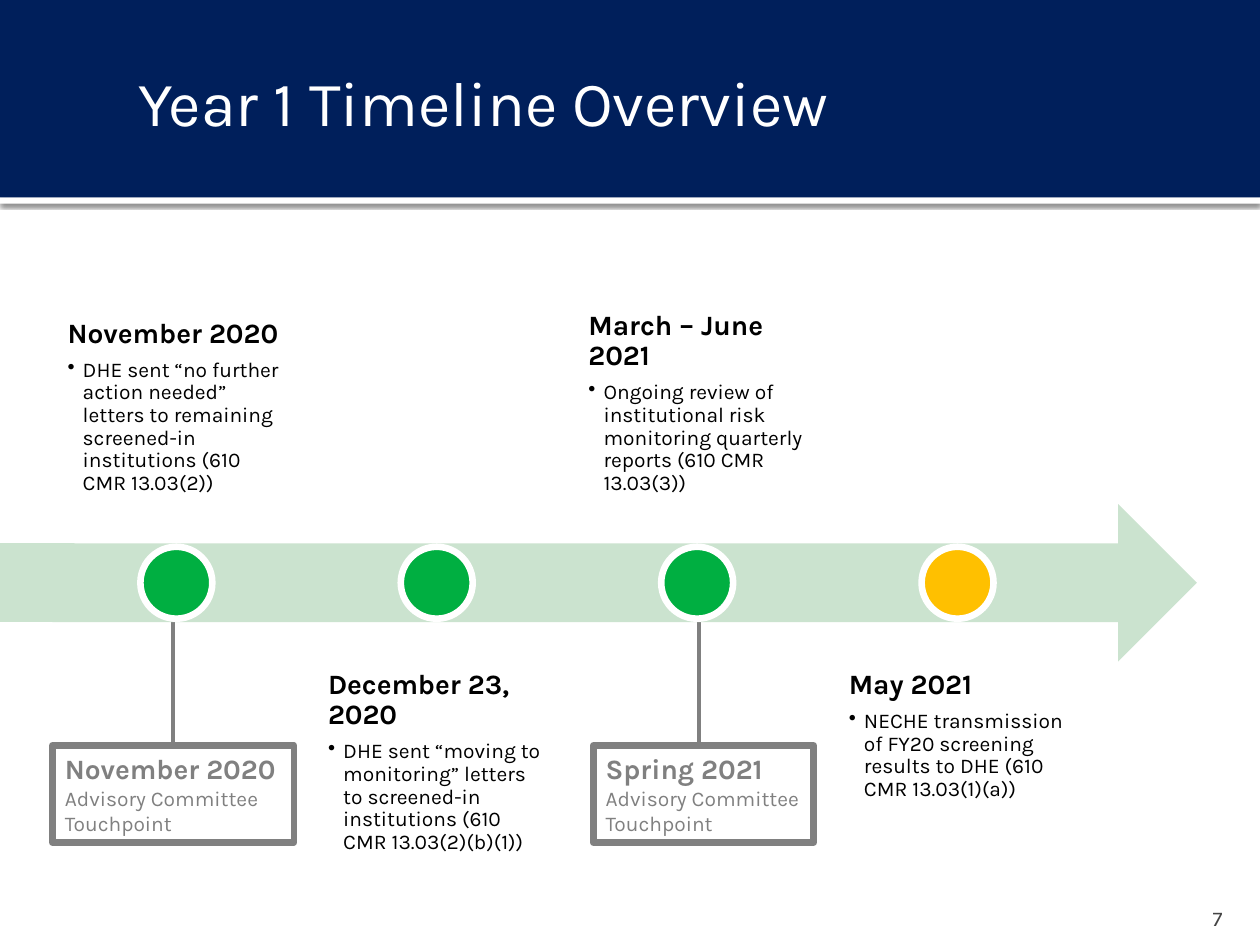
from dataclasses import dataclass

from lxml.etree import SubElement
from pptx import Presentation
from pptx.dml.color import RGBColor
from pptx.enum.shapes import MSO_CONNECTOR as CONN, MSO_SHAPE as SHAPE
from pptx.enum.text import MSO_ANCHOR as ANCHOR, PP_ALIGN as ALIGN
from pptx.oxml.ns import qn
from pptx.util import Inches, Pt

COLS, ROWS = 120, 90
WIDTH, HEIGHT = Inches(10), Inches(7.5)


@dataclass(frozen=True)
class Theme:
    font: str = "Karla"
    navy: str = "001F5B"
    white: str = "FFFFFF"
    black: str = "000000"
    gray: str = "808080"
    dark: str = "454545"
    band: str = "CBE3CF"
    done: str = "00AF41"
    due: str = "FFC000"
    title: int = 36
    head: int = 16
    body: int = 12
    outline: float = 3.78
    stem: float = 2.25


@dataclass(frozen=True)
class Box:
    x: float
    y: float
    w: float
    h: float

    def emu(self):
        return gx(self.x), gy(self.y), gx(self.w), gy(self.h)


T = Theme()


def gx(cols):
    return round(WIDTH * cols / COLS)


def gy(rows):
    return round(HEIGHT * rows / ROWS)


def rgb(color):
    return RGBColor.from_string(color)


def add_shape(s, kind, box, fill, line=None, width=T.outline):
    sp = s.shapes.add_shape(kind, *box.emu())
    sp.shadow.inherit = False
    sp.fill.solid()
    sp.fill.fore_color.rgb = rgb(fill)
    if line:
        sp.line.color.rgb = rgb(line)
        sp.line.width = Pt(width)
    else:
        sp.line.fill.background()
    return sp


def add_text(s, box, anchor, insets):
    tf = s.shapes.add_textbox(*box.emu()).text_frame
    tf.word_wrap = True
    tf.vertical_anchor = anchor
    tf.margin_left, tf.margin_top, tf.margin_right, tf.margin_bottom = map(Inches, insets)
    return tf


def add_run(p, text, size, color, bold=False):
    r = p.add_run()
    r.text = text
    r.font.name, r.font.size, r.font.bold = T.font, Pt(size), bold
    r.font.color.rgb = rgb(color)


def add_shadow(sp):
    effects = sp._element.spPr.find(qn("a:effectLst"))
    shadow = SubElement(effects, qn("a:outerShdw"), blurRad=str(Pt(2.5)),
                        dist=str(Pt(0.8)), dir="5400000", rotWithShape="0")
    color = SubElement(shadow, qn("a:srgbClr"), val=T.black)
    SubElement(color, qn("a:alpha"), val="60000")


def add_bullet(p):
    pPr = p._p.get_or_add_pPr()
    pPr.set("marL", str(Inches(0.12)))
    pPr.set("indent", str(-Inches(0.12)))
    SubElement(pPr, qn("a:buChar"), char="•")


def header(s, box, title):
    rule = add_shape(s, SHAPE.RECTANGLE, Box(box.x, box.y + box.h, box.w, 0.6), T.white)
    add_shadow(rule)
    add_shape(s, SHAPE.RECTANGLE, box, T.navy)
    tf = add_text(s, Box(box.x + 12, box.y + 4.2, box.w - 12, 11),
                  ANCHOR.MIDDLE, (0.1, 0.05, 0.05, 0.05))
    add_run(tf.paragraphs[0], title, T.title, T.white)


def page_number(s, box, number):
    tf = add_text(s, box, ANCHOR.BOTTOM, (0.1, 0.05, 0.1, 0))
    p = tf.paragraphs[0]
    p.alignment = ALIGN.RIGHT
    add_run(p, number, T.body, T.dark)


def touchpoint(s, box, stem_x, top, paragraphs):
    sp = add_shape(s, SHAPE.RECTANGLE, box, T.white, T.gray)
    tf = sp.text_frame
    tf.word_wrap = True
    tf.vertical_anchor = ANCHOR.TOP
    for i, runs in enumerate(paragraphs):
        p = tf.add_paragraph() if i else tf.paragraphs[0]
        p.alignment = ALIGN.LEFT
        for text, size, bold in runs:
            add_run(p, text, size, T.gray, bold)
    stem = s.shapes.add_connector(CONN.STRAIGHT, gx(stem_x), gy(box.y), gx(stem_x), gy(top))
    stem.line.color.rgb = rgb(T.gray)
    stem.line.width = Pt(T.stem)
    SubElement(stem._element.spPr, qn("a:effectLst"))


def event(s, box, anchor, date, detail):
    tf = add_text(s, box, anchor, (0.12,) * 4)
    p = tf.paragraphs[0]
    p.line_spacing, p.space_after = 0.9, Pt(T.head * 0.35)
    add_run(p, date, T.head, T.black, True)
    p = tf.add_paragraph()
    p.line_spacing, p.space_after = 0.9, Pt(T.body * 0.15)
    add_bullet(p)
    add_run(p, detail, T.body, T.black)


def timeline(s, box, events):
    width, step, height, dot = 23.6, 24.8, 27.6, 6.85
    middle = box.y + box.h / 2
    add_shape(s, SHAPE.RECTANGLE, Box(0, middle - 3.5, 7, 7), T.band, T.band, 3)
    add_shape(s, SHAPE.RIGHT_ARROW, box, T.band)
    for i, (date, detail, color) in enumerate(events):
        x = box.x + i * step
        above = i % 2 == 0
        y = box.y + 0.6 - height if above else box.y + box.h - 0.6
        anchor = ANCHOR.BOTTOM if above else ANCHOR.TOP
        event(s, Box(x, y, width, height), anchor, date, detail)
        add_shape(s, SHAPE.OVAL, Box(x + (width - dot) / 2, middle - dot / 2, dot, dot),
                  color, T.white)


def main():
    prs = Presentation()
    prs.slide_width, prs.slide_height = WIDTH, HEIGHT
    s = prs.slides.add_slide(prs.slide_layouts[6])
    header(s, Box(0, 0, COLS, 18.8), "Year 1 Timeline Overview")
    page_number(s, Box(108, 85, 9.6, 3.6), "7")
    note = ("Advisory Committee Touchpoint", T.body, False)
    touchpoint(s, Box(5, 71, 23, 9.25), 16.5, 56,
               [[("November 2020 ", T.head, True), note]])
    touchpoint(s, Box(56.5, 71, 21, 9.25), 66.6, 56,
               [[("Spring 2021", T.head, True)], [note]])
    timeline(s, Box(5, 48, 109, 15), [
        ("November 2020", "DHE sent “no further action needed” letters to remaining "
         "screened-in institutions (610 CMR 13.03(2))", T.done),
        ("December 23, 2020", "DHE sent “moving to monitoring” letters to screened-in "
         "institutions (610 CMR 13.03(2)(b)(1))", T.done),
        ("March – June 2021", "Ongoing review of institutional risk monitoring quarterly "
         "reports (610 CMR 13.03(3))", T.done),
        ("May 2021", "NECHE transmission of FY20 screening results to DHE "
         "(610 CMR 13.03(1)(a))", T.due),
    ])
    prs.save("out.pptx")


if __name__ == "__main__":
    main()
